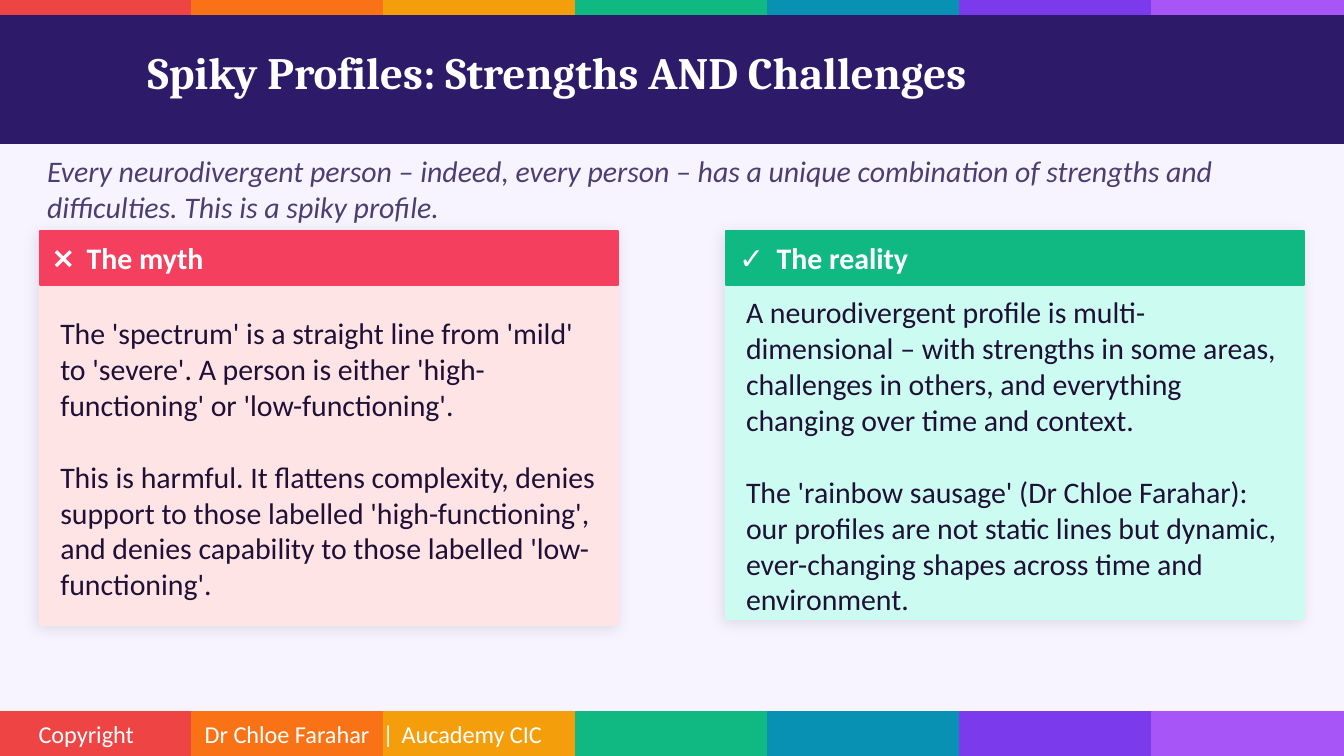
from dataclasses import dataclass

from lxml import etree
from pptx import Presentation
from pptx.dml.color import RGBColor
from pptx.enum.shapes import MSO_SHAPE
from pptx.enum.text import MSO_ANCHOR, MSO_AUTO_SIZE, PP_ALIGN
from pptx.oxml.ns import qn
from pptx.shapes.autoshape import Shape
from pptx.slide import Slide
from pptx.util import Cm, Pt

RECTANGLE = MSO_SHAPE.RECTANGLE
MIDDLE = MSO_ANCHOR.MIDDLE
LEFT = PP_ALIGN.LEFT
NO_AUTOFIT = MSO_AUTO_SIZE.NONE
TITLE_ONLY = 5


@dataclass(frozen=True)
class Theme:
    rainbow: tuple[str, ...] = (
        "EF4444", "F97316", "F59E0B", "10B981", "0891B2", "7C3AED", "A855F7")
    background: str = "F8F4FF"
    band: str = "2D1B69"
    light: str = "FFFFFF"
    intro: str = "4B3F72"
    body: str = "1F1035"
    shadow: str = "000000"
    title_font: str = "Cambria"
    body_font: str = "Calibri"
    title_size: float = 24
    body_size: float = 16
    footer_size: float = 13
    paragraph_gap: float = 19.5


@dataclass(frozen=True)
class Area:
    """A place on the slide, in centimetres."""
    left: float
    top: float
    width: float
    height: float


@dataclass(frozen=True)
class Card:
    left: float
    height: float
    header_color: str
    fill_color: str
    heading: str
    heading_tab: float
    paragraphs: tuple[str, ...]


THEME = Theme()
SLIDE_WIDTH, SLIDE_HEIGHT = 25.4, 14.29
STRIPE_HEIGHT = 0.3
FOOTER_TOP = 13.46
CARD_TOP, CARD_WIDTH, HEADER_HEIGHT = 4.37, 10.92, 1.02

CARDS = (
    Card(0.76, 7.44, "F43F5E", "FFE4E6", "❌\tThe myth", 0.63, (
        "The 'spectrum' is a straight line from 'mild' to 'severe'. A person is "
        "either 'high-functioning' or 'low-functioning'.",
        "This is harmful. It flattens complexity, denies support to those labelled "
        "'high-functioning', and denies capability to those labelled "
        "'low-functioning'.")),
    Card(13.72, 7.34, "10B981", "CCFBF1", "✓\tThe reality", 0.71, (
        "A neurodivergent profile is multi-dimensional – with strengths in some "
        "areas, challenges in others, and everything changing over time and context.",
        "The 'rainbow sausage' (Dr Chloe Farahar): our profiles are not static lines "
        "but dynamic, ever-changing shapes across time and environment.")),
)


def place(box: Shape, area: Area) -> None:
    box.left, box.top = Cm(area.left), Cm(area.top)
    box.width, box.height = Cm(area.width), Cm(area.height)


def add_block(page: Slide, area: Area, color: str) -> Shape:
    block = page.shapes.add_shape(RECTANGLE, 0, 0, 0, 0)
    place(block, area)
    block.shadow.inherit = False
    block.fill.solid()
    block.fill.fore_color.rgb = RGBColor.from_string(color)
    block.line.color.rgb = RGBColor.from_string(color)
    block.line.width = Pt(1)
    return block


def add_soft_shadow(block: Shape) -> None:
    effects = block._element.spPr.find(qn("a:effectLst"))
    shadow = etree.SubElement(
        effects, qn("a:outerShdw"), blurRad=str(Pt(8)), dist=str(Pt(2)),
        dir=str(135 * 60000), algn="bl", rotWithShape="0")
    color = etree.SubElement(shadow, qn("a:srgbClr"), val=THEME.shadow)
    etree.SubElement(color, qn("a:alpha"), val="10000")


def write(box: Shape, *texts: str, color: str, size: float = THEME.body_size,
          font: str = THEME.body_font, bold: bool = False, italic: bool = False,
          inset: float = 0, tabs: tuple[float, ...] = ()) -> None:
    """Fill a box with paragraphs; tabs are stop positions in centimetres."""
    frame = box.text_frame
    frame.word_wrap = True
    frame.auto_size = NO_AUTOFIT
    frame.vertical_anchor = MIDDLE
    frame.margin_left = frame.margin_right = Cm(inset)
    frame.margin_top = frame.margin_bottom = 0
    for index, text in enumerate(texts):
        para = frame.add_paragraph() if index else frame.paragraphs[0]
        para.alignment = LEFT
        para.space_before = Pt(THEME.paragraph_gap if index else 0)
        if tabs:
            stops = etree.SubElement(para._p.get_or_add_pPr(), qn("a:tabLst"))
            for position in tabs:
                etree.SubElement(stops, qn("a:tab"), pos=str(Cm(position)), algn="l")
        span = para.add_run()
        span.text = text
        span.font.name = font
        span.font.size = Pt(size)
        span.font.bold = bold
        span.font.italic = italic
        span.font.color.rgb = RGBColor.from_string(color)


def add_text(page: Slide, area: Area, *texts: str, **text_format) -> None:
    box = page.shapes.add_textbox(0, 0, 0, 0)
    place(box, area)
    write(box, *texts, **text_format)


def add_rainbow(page: Slide, top: float, height: float) -> None:
    width = SLIDE_WIDTH / len(THEME.rainbow)
    for index, color in enumerate(THEME.rainbow):
        add_block(page, Area(index * width, top, width, height), color)


def add_title(page: Slide, text: str) -> None:
    band = add_block(page, Area(0, STRIPE_HEIGHT, SLIDE_WIDTH, 2.41), THEME.band)
    title = page.shapes.title
    place(title, Area(2.79, 0.46, 21.59, 1.78))
    write(title, text, color=THEME.light, size=THEME.title_size,
          font=THEME.title_font, bold=True)
    band._element.addnext(title._element)


def add_card(page: Slide, card: Card) -> None:
    panel = add_block(
        page, Area(card.left, CARD_TOP, CARD_WIDTH, card.height), card.fill_color)
    add_soft_shadow(panel)
    add_block(page, Area(card.left, CARD_TOP, CARD_WIDTH, HEADER_HEIGHT),
              card.header_color)
    add_text(page, Area(card.left + 0.25, CARD_TOP + 0.1, CARD_WIDTH - 0.5, 0.81),
             card.heading, color=THEME.light, bold=True, tabs=(card.heading_tab,))
    add_text(page, Area(card.left + 0.38, CARD_TOP + 1.22, 10.16, card.height - 1.3),
             *card.paragraphs, color=THEME.body)


def main() -> None:
    deck = Presentation()
    deck.slide_width, deck.slide_height = Cm(SLIDE_WIDTH), Cm(SLIDE_HEIGHT)
    page = deck.slides.add_slide(deck.slide_layouts[TITLE_ONLY])
    page.background.fill.solid()
    page.background.fill.fore_color.rgb = RGBColor.from_string(THEME.background)

    add_rainbow(page, 0, STRIPE_HEIGHT)
    add_title(page, "Spiky Profiles: Strengths AND Challenges")
    add_text(page, Area(0.89, 3.05, 23.62, 1.02),
             "Every neurodivergent person – indeed, every person – has a unique "
             "combination of strengths and difficulties. This is a spiky profile.",
             color=THEME.intro, italic=True)
    for card in CARDS:
        add_card(page, card)
    add_rainbow(page, FOOTER_TOP, SLIDE_HEIGHT - FOOTER_TOP)
    add_text(page, Area(0.48, 13.36, 21.03, 1.02),
             "Copyright\tDr Chloe Farahar\t|\tAucademy CIC", color=THEME.light,
             size=THEME.footer_size, inset=0.25, tabs=(3.14, 6.5, 6.86))
    deck.save("out.pptx")


if __name__ == "__main__":
    main()
